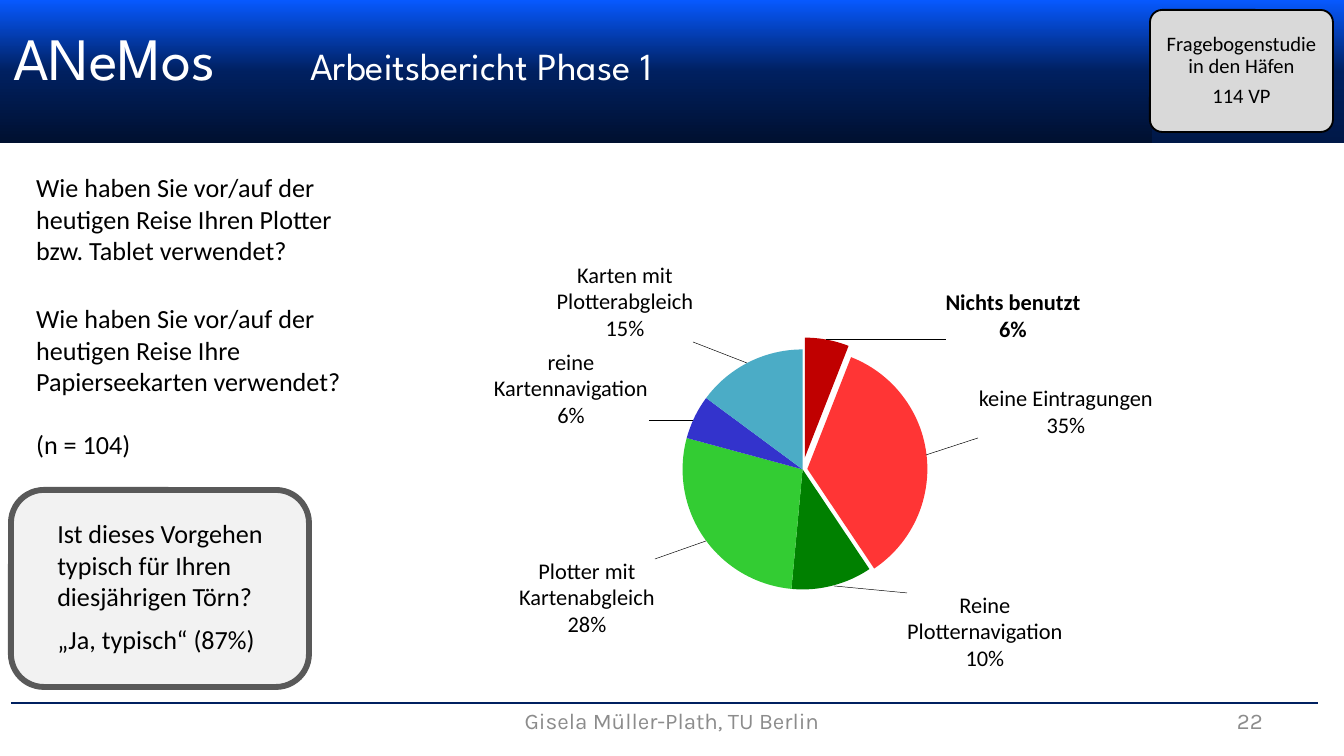
from dataclasses import dataclass

from lxml import etree
from pptx import Presentation
from pptx.chart.data import CategoryChartData
from pptx.dml.color import RGBColor
from pptx.enum.chart import XL_CHART_TYPE
from pptx.enum.shapes import MSO_CONNECTOR, MSO_SHAPE
from pptx.enum.text import MSO_ANCHOR, PP_ALIGN
from pptx.oxml import parse_xml
from pptx.oxml.ns import nsdecls, qn
from pptx.util import Emu, Pt


@dataclass(frozen=True)
class Theme:
    body: str = "Calibri"
    footer: str = "Karla"
    title: str = "League Spartan"
    black: str = "000000"
    white: str = "FFFFFF"
    grey: str = "8C8C8C"
    navy: str = "002060"
    bright: str = "0759FF"
    badge: str = "D9D9D9"
    answer: str = "F2F2F2"
    answer_line: str = "595959"
    title_size: float = 32.2
    subtitle_size: float = 20.5
    text_size: float = 14
    label_size: float = 12
    badge_size: float = 11


THEME = Theme()
PX = 914400 / 134.4

BANDS = [  # box, colour at the bottom
    ((1267, 0, 77, 143), "001848"),
    ((1146, 0, 141, 143), "001848"),
    ((0, 0, 1152, 143), "001030"),
]
FOOTERS = [
    ("Gisela Müller-Plath, TU Berlin", (459, 701, 426, 40), PP_ALIGN.CENTER),
    ("22", (963, 701, 313, 40), PP_ALIGN.RIGHT),
]
TITLE, SUBTITLE = "ANeMos", "Arbeitsbericht Phase 1"
QUESTIONS = [  # paragraphs, box, space between paragraphs in points
    (["Wie haben Sie vor/auf der heutigen Reise Ihren Plotter bzw. Tablet verwendet?"],
     (23, 165, 336, 109), 0),
    (["Wie haben Sie vor/auf der heutigen Reise Ihre Papierseekarten verwendet?",
      "(n = 104)"], (23, 296, 336, 172), 17),
]
ANSWER = ["Ist dieses Vorgehen typisch für Ihren diesjährigen Törn?", "„Ja, typisch“ (87%)"]
BADGE = ["Fragebogenstudie in den Häfen", "114 VP"]

SLICES = [  # name lines, shown share, value, colour, explosion, text centre, leader ends
    (["Nichts benutzt"], "6%", 6, "C00000", 10, (1013, 315), (946, 339), (826, 339)),
    (["keine Eintragungen"], "35%", 35, "FF3535", 4, (1066, 411), (978, 438), (926, 455)),
    (["Reine", "Plotternavigation"], "10%", 11, "008000", 0, (985, 631), (907, 593), (834, 586)),
    (["Plotter mit", "Kartenabgleich"], "28%", 28, "33CC33", 0, (587, 597), (655, 559), (706, 541)),
    (["reine", "Kartennavigation"], "6%", 6, "3333CC", 0, (571, 388), (649, 420), (693, 420)),
    (["Karten mit", "Plotterabgleich"], "15%", 15, "4BACC6", 0, (625, 301), (693, 342), (747, 363)),
]
CHART_BOX = (382, 132, 938, 552)
PLOT_LAYOUT = {"x": 0.295, "y": 0.394, "w": 0.307, "h": 0.435}


def px(*lengths):
    return [Emu(round(length * PX)) for length in lengths]


def color(value):
    return RGBColor.from_string(value)


def style_run(run, font, size, ink, bold=False):
    run.font.name, run.font.size, run.font.bold = font, Pt(size), bold
    run.font.color.rgb = color(ink)


def add_text(slide, lines, box, size, font=THEME.body, ink=THEME.black, bold=False,
             align=PP_ALIGN.LEFT, anchor=MSO_ANCHOR.TOP, gap=0, spacing=None, inset=None):
    """Add a wrapped text box with one paragraph per line of content."""
    frame = slide.shapes.add_textbox(*px(*box)).text_frame
    frame.word_wrap = True
    frame.vertical_anchor = anchor
    if inset is not None:
        frame.margin_left, frame.margin_top, frame.margin_right, frame.margin_bottom = px(*[inset] * 4)
    frame.text = "\n".join(lines)
    for index, paragraph in enumerate(frame.paragraphs):
        paragraph.alignment = align
        paragraph.line_spacing = spacing
        if index and gap:
            paragraph.space_before = Pt(gap)
        for run in paragraph.runs:
            style_run(run, font, size, ink, bold)
    return frame


def add_panel(slide, kind, box, fill=None, line=None, width=1):
    shape = slide.shapes.add_shape(kind, *px(*box))
    shape.shadow.inherit = False
    if fill:
        shape.fill.solid()
        shape.fill.fore_color.rgb = color(fill)
    if line:
        shape.line.color.rgb = color(line)
        shape.line.width = Pt(width)
    else:
        shape.line.fill.background()
    return shape


def add_band(slide, box, bottom):
    shape = add_panel(slide, MSO_SHAPE.RECTANGLE, box)
    stops = "".join(
        f'<a:gs pos="{position}"><a:srgbClr val="{value}"/></a:gs>'
        for position, value in [(0, THEME.bright), (50000, THEME.navy), (100000, bottom)])
    gradient = parse_xml(f'<a:gradFill {nsdecls("a")} rotWithShape="1"><a:gsLst>{stops}</a:gsLst>'
                         '<a:lin ang="5400000" scaled="0"/></a:gradFill>')
    shape._element.spPr.find(qn("a:prstGeom")).addnext(gradient)


def add_line(slide, start, end, ink, width):
    line = slide.shapes.add_connector(MSO_CONNECTOR.STRAIGHT, *px(*start, *end))
    line.line.color.rgb = color(ink)
    line.line.width = Pt(width)
    etree.SubElement(line._element.spPr, qn("a:effectLst"))


def add_title(slide):
    frame = add_text(slide, [TITLE], (0, 11, 1277, 91), THEME.title_size, THEME.title,
                     THEME.white, anchor=MSO_ANCHOR.MIDDLE)
    paragraph = frame.paragraphs[0]
    tabs = etree.SubElement(paragraph._p.get_or_add_pPr(), qn("a:tabLst"))
    etree.SubElement(tabs, qn("a:tab"), pos=str(px(297)[0]), algn="l")
    run = paragraph.add_run()
    run.text = "\t" + SUBTITLE
    style_run(run, THEME.title, THEME.subtitle_size, THEME.white)


def add_pie(slide):
    data = CategoryChartData()
    data.categories = [" ".join(name) for name, *_ in SLICES]
    data.add_series("Series 1", [value for _, _, value, *_ in SLICES])
    chart = slide.shapes.add_chart(XL_CHART_TYPE.PIE, *px(*CHART_BOX), data).chart
    chart.has_legend = chart.has_title = False
    chart.font.name, chart.font.size = THEME.body, Pt(THEME.label_size)
    chart.font.color.rgb = color(THEME.black)
    plot = chart.plots[0]
    plot.vary_by_categories = False
    series = plot.series[0]
    for index, (_, _, _, fill, explosion, *_) in enumerate(SLICES):
        point_format = series.points[index].format
        point_format.fill.solid()
        point_format.fill.fore_color.rgb = color(fill)
        point_format.line.fill.background()
        if explosion:
            data_point = series._element.findall(qn("c:dPt"))[index]
            data_point.find(qn("c:spPr")).addprevious(
                parse_xml(f'<c:explosion {nsdecls("c")} val="{explosion}"/>'))
    area = chart._chartSpace.chart.plotArea
    for layout in area.findall(qn("c:layout")):
        area.remove(layout)
    sizes = "".join(f'<c:{key} val="{value}"/>' for key, value in PLOT_LAYOUT.items())
    area.insert(0, parse_xml(
        f'<c:layout {nsdecls("c")}><c:manualLayout><c:layoutTarget val="inner"/>'
        f'<c:xMode val="edge"/><c:yMode val="edge"/>{sizes}</c:manualLayout></c:layout>'))


def add_callouts(slide):
    width, line_height = 220, 27
    for index, (name, share, _, _, _, (x, y), start, end) in enumerate(SLICES):
        lines = name + [share]
        height = line_height * len(lines)
        add_text(slide, lines, (x - width / 2, y - height / 2, width, height), THEME.label_size,
                 bold=index == 0, align=PP_ALIGN.CENTER, anchor=MSO_ANCHOR.MIDDLE, inset=0)
        add_line(slide, start, end, THEME.black, 0.25)


def main():
    presentation = Presentation()
    presentation.slide_width, presentation.slide_height = px(1344, 756)
    slide = presentation.slides.add_slide(presentation.slide_layouts[6])
    for box, bottom in BANDS:
        add_band(slide, box, bottom)
    for text, box, align in FOOTERS:
        add_text(slide, [text], box, THEME.label_size, THEME.footer, THEME.grey,
                 align=align, anchor=MSO_ANCHOR.MIDDLE)
    add_title(slide)
    badge = add_panel(slide, MSO_SHAPE.ROUNDED_RECTANGLE, (1150, 10, 183, 122),
                      THEME.badge, THEME.black)
    badge.adjustments[0] = 0.1
    add_text(slide, BADGE, (1153, 13, 177, 115), THEME.badge_size, align=PP_ALIGN.CENTER,
             anchor=MSO_ANCHOR.MIDDLE, gap=4, spacing=0.9, inset=7)
    add_line(slide, (11, 703), (1318, 703), THEME.navy, 0.9)
    for lines, box, gap in QUESTIONS:
        add_text(slide, lines, box, THEME.text_size, gap=gap)
    add_pie(slide)
    add_callouts(slide)
    add_panel(slide, MSO_SHAPE.ROUNDED_RECTANGLE, (11, 490, 298, 197),
              THEME.answer, THEME.answer_line, 3.15)
    add_text(slide, ANSWER, (44, 511, 233, 152), THEME.text_size, gap=6)
    presentation.save("out.pptx")


if __name__ == "__main__":
    main()
